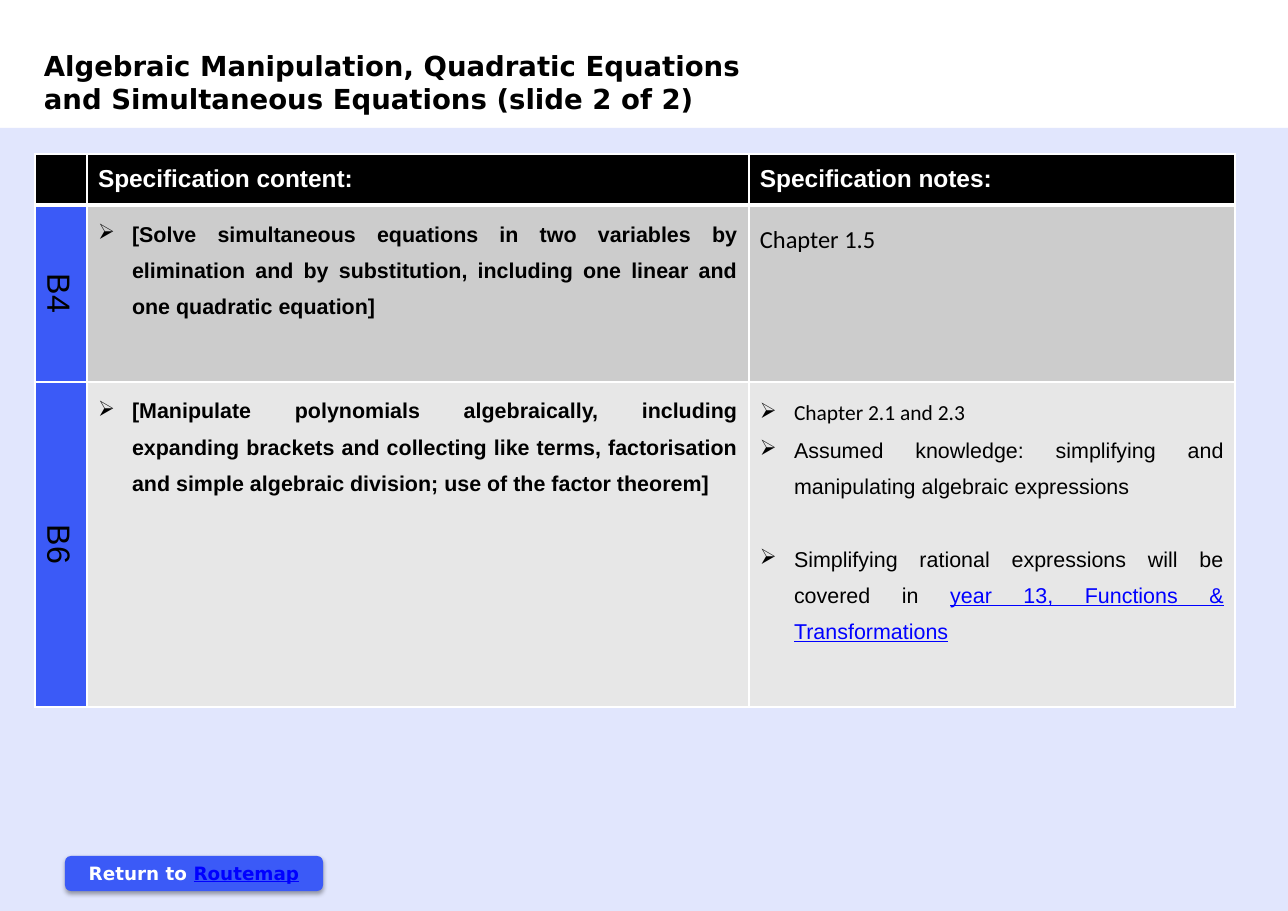
from lxml.etree import SubElement
from pptx import Presentation
from pptx.dml.color import RGBColor
from pptx.enum.shapes import MSO_SHAPE
from pptx.enum.text import MSO_ANCHOR, PP_ALIGN
from pptx.oxml import parse_xml
from pptx.oxml.ns import nsdecls, qn
from pptx.util import Pt

HUE = {"blue": "3B5AF7", "link": "0000FF", "black": "000000",
       "white": "FFFFFF", "mid": "CCCCCC", "pale": "E7E7E7"}

FONT = {
    "title": {"name": "DejaVu Sans", "size": Pt(18), "bold": True},
    "button": {"name": "DejaVu Sans", "size": Pt(12), "bold": True},
    "head": {"name": "Arial", "size": Pt(16), "bold": True},
    "code": {"name": "Arial", "size": Pt(21), "bold": False},
    "topic": {"name": "Arial", "size": Pt(14), "bold": True},
    "note": {"name": "Arial", "size": Pt(14), "bold": False},
    "book": {"name": "Calibri", "size": Pt(14), "bold": False},
    "lead": {"name": "Calibri", "size": Pt(16), "bold": False},
}

TITLE = ["Algebraic Manipulation, Quadratic Equations",
         "and Simultaneous Equations (slide 2 of 2)"]
BUTTON = [("Return to ", "white"), ("Routemap", "link")]
HEADS = ["", "Specification content:", "Specification notes:"]
ROWS = [
    ("B4", "mid",
     "[Solve simultaneous equations in two variables by elimination and by "
     "substitution, including one linear and one quadratic equation]",
     [("lead", False, 0, [("Chapter 1.5", "black")])]),
    ("B6", "pale",
     "[Manipulate polynomials algebraically, including expanding brackets and "
     "collecting like terms, factorisation and simple algebraic division; "
     "use of the factor theorem]",
     [("book", True, 0, [("Chapter 2.1 and 2.3", "black")]),
      ("note", True, 0, [("Assumed knowledge: simplifying and manipulating "
                          "algebraic expressions", "black")]),
      ("note", True, 24, [
          ("Simplifying rational expressions will be covered in ", "black"),
          ("year 13, Functions & Transformations", "link")])]),
]
WIDE = [52, 662, 486]
HIGH = [51, 177, 325]
INDENT = 34


def px(n):
    return round(n * 914400 / 110.2)


def box(*lens):
    return [px(n) for n in lens]


def tint(fill, hue):
    fill.solid()
    fill.fore_color.rgb = RGBColor.from_string(HUE[hue])


def write(para, runs, style):
    for text, hue in runs:
        run = para.add_run()
        run.text = text
        look = {**FONT[style], "underline": hue == "link"}
        for key, val in look.items():
            setattr(run.font, key, val)
        run.font.color.rgb = RGBColor.from_string(HUE[hue])


def block(shapes, kind, area, hue):
    shape = shapes.add_shape(kind, *box(*area))
    shape.shadow.inherit = False
    tint(shape.fill, hue)
    shape.line.fill.background()
    return shape


def edge(cell, low):
    props = cell._tc.get_or_add_tcPr()
    for i, side in enumerate("LRTB"):
        wide = Pt(low if side == "B" else 1)
        props.insert(i, parse_xml(
            f'<a:ln{side} {nsdecls("a")} w="{wide}"><a:solidFill>'
            f'<a:srgbClr val="{HUE["white"]}"/></a:solidFill></a:ln{side}>'))


def fill_cell(cell, hue, paras, low=1):
    tint(cell.fill, hue)
    edge(cell, low)
    frame = cell.text_frame
    for i, (style, mark, gap, runs) in enumerate(paras):
        para = frame.add_paragraph() if i else frame.paragraphs[0]
        if mark:
            props = para._p.get_or_add_pPr()
            props.set("marL", str(px(INDENT)))
            props.set("indent", str(-px(INDENT)))
            SubElement(props, qn("a:buChar"), char="➢")
        if style in ("topic", "note", "book", "lead"):
            para.alignment = PP_ALIGN.JUSTIFY
            para.line_spacing = 1.5
        if gap:
            para.space_before = Pt(gap)
        write(para, runs, style)


def main():
    deck = Presentation()
    deck.slide_width, deck.slide_height = box(1288, 911)
    shapes = deck.slides.add_slide(deck.slide_layouts[6]).shapes

    panel = block(shapes, MSO_SHAPE.RECTANGLE, (0, 128, 1288, 783), "blue")
    tone = panel._element.spPr.find(".//" + qn("a:srgbClr"))
    SubElement(tone, qn("a:alpha"), val="15000")

    button = block(shapes, MSO_SHAPE.ROUNDED_RECTANGLE, (65, 856, 258, 35), "blue")
    button._element.spPr.find(qn("a:effectLst")).append(parse_xml(
        f'<a:outerShdw {nsdecls("a")} blurRad="{Pt(3.1)}" dist="{Pt(1.8)}" '
        f'dir="5400000" rotWithShape="0"><a:srgbClr val="{HUE["black"]}">'
        '<a:alpha val="35000"/></a:srgbClr></a:outerShdw>'))
    button.text_frame.vertical_anchor = MSO_ANCHOR.MIDDLE
    label = button.text_frame.paragraphs[0]
    label.alignment = PP_ALIGN.CENTER
    write(label, BUTTON, "button")

    area = box(35, 154, sum(WIDE), sum(HIGH))
    table = shapes.add_table(len(HIGH), len(WIDE), *area).table
    for col, wide in zip(table.columns, WIDE):
        col.width = px(wide)
    for row, high in zip(table.rows, HIGH):
        row.height = px(high)
    for i, head in enumerate(HEADS):
        cell = table.cell(0, i)
        paras = [("head", False, 0, [(head, "white")])] if head else []
        fill_cell(cell, "black", paras, 3)
        cell.vertical_anchor = MSO_ANCHOR.MIDDLE
    for i, (code, hue, topic, notes) in enumerate(ROWS, 1):
        first = table.cell(i, 0)
        fill_cell(first, "blue", [("code", False, 0, [(code, "black")])])
        first._tc.tcPr.set("vert", "vert")
        first.text_frame.paragraphs[0].alignment = PP_ALIGN.CENTER
        fill_cell(table.cell(i, 1), hue, [("topic", True, 0, [(topic, "black")])])
        fill_cell(table.cell(i, 2), hue, notes)

    frame = shapes.add_textbox(*box(33, 44, 727, 78)).text_frame
    for i, line in enumerate(TITLE):
        para = frame.add_paragraph() if i else frame.paragraphs[0]
        write(para, [(line, "black")], "title")

    deck.save("out.pptx")


if __name__ == "__main__":
    main()
